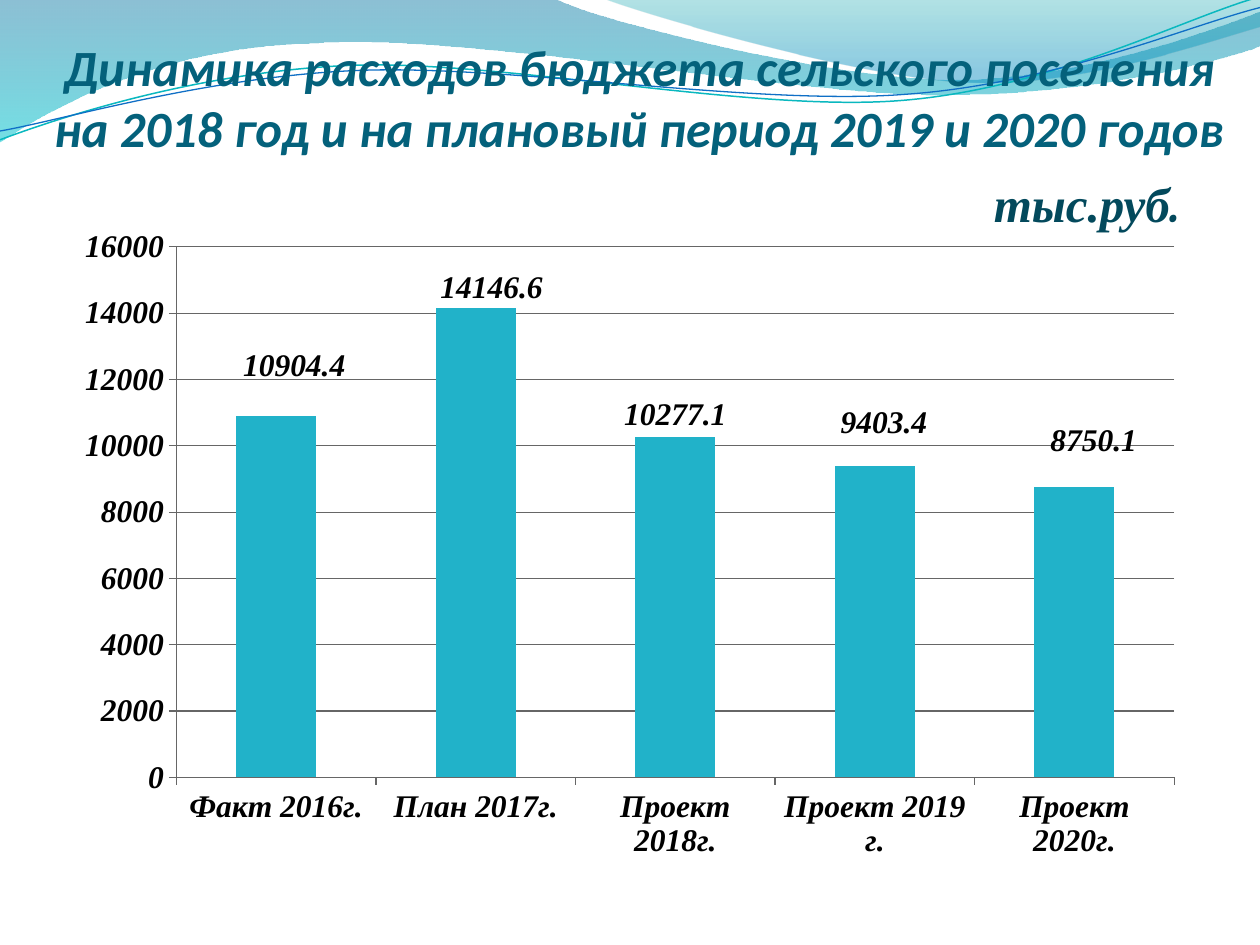
from lxml.etree import SubElement
from pptx import Presentation
from pptx.chart.data import CategoryChartData
from pptx.dml.color import RGBColor
from pptx.enum.chart import XL_CHART_TYPE, XL_LABEL_POSITION, XL_TICK_MARK
from pptx.enum.text import MSO_ANCHOR, MSO_AUTO_SIZE, PP_ALIGN
from pptx.oxml import parse_xml
from pptx.oxml.ns import nsdecls, qn
from pptx.util import Inches, Pt

TITLE = ("Динамика расходов бюджета сельского поселения "
         "на 2018 год и на плановый период 2019 и 2020 годов ")
UNIT = [("тыс.руб", "Times New Roman"), (".", "Cambria")]
# category, value, shift of its label as shares of the chart
BARS = [
    ("Факт 2016г.", 10904.4, (0.016, -0.043)),
    ("План 2017г.", 14146.6, (0.014, 0.003)),
    ("Проект 2018г.", 10277.1, None),
    ("Проект 2019 г.", 9403.4, (0.008, -0.032)),
    ("Проект 2020г.", 8750.1, (0.017, -0.037)),
]
PLOT = (0.1, 0.046, 0.88, 0.81)

BLACK = RGBColor(0, 0, 0)
GREY = RGBColor(0x66, 0x66, 0x66)
TEAL = RGBColor(0x04, 0x61, 0x7B)
DARK = RGBColor(0x03, 0x49, 0x5C)
BAR = RGBColor(0x21, 0xB2, 0xC9)
AQUA = RGBColor(0x0A, 0xB8, 0xBF)
BLUE = RGBColor(0x0F, 0x6F, 0xC6)

# A path is a list of parts: one point adds a line, three add a Bezier curve.
# Bands: path, then gradient stops as place, colour, opacity in percent
BANDS = [
    ([[(0, 0)], [(4.4, -0.01)],
      [(4.76, 0.17), (6.64, 0.63), (7.58, 0.63)],
      [(8.53, 0.63), (9.58, 0.26), (10, 0.09)], [(10.01, 0.36)],
      [(9.83, 0.44), (8.7, 0.76), (7.46, 0.75)],
      [(6.22, 0.75), (3.82, 0.28), (2.57, 0.34)],
      [(1.29, 0.36), (0.46, 0.83), (-0.01, 1.13)], [(0, 0)]],
     [(0, RGBColor(0x00, 0x74, 0xA1), 45), (1, RGBColor(0x00, 0xC6, 0xCF), 55)]),
    ([[(4.79, -0.01)],
      [(5.09, 0.11), (6.82, 0.62), (7.69, 0.65)],
      [(8.56, 0.69), (9.61, 0.32), (10, 0.21)], [(10, 0)], [(4.79, -0.01)]],
     [(0, RGBColor(0x00, 0xA1, 0xA9), 30), (0.8, RGBColor(0x00, 0x8B, 0xBF), 45)]),
]
WAVES = [
    ([[(0, 1.11)],
      [(0.48, 0.93), (1.58, 0.57), (2.77, 0.52)],
      [(3.95, 0.47), (5.93, 0.89), (7.13, 0.8)],
      [(8.33, 0.71), (9.38, 0.15), (9.98, -0.02)]], AQUA, 0.85),
    ([[(0, 1.04)],
      [(0.47, 0.96), (1.64, 0.61), (2.83, 0.56)],
      [(4.03, 0.51), (5.97, 0.84), (7.17, 0.75)],
      [(8.36, 0.67), (9.41, 0.21), (10, 0.06)]], BLUE, 0.75),
]


def draw(slide, path, close):
    """Draw straight parts, then merge each three of a curve into one Bezier."""
    first, *rest = [(Inches(x), Inches(y)) for part in path for x, y in part]
    pen = slide.shapes.build_freeform(*first, scale=1.0)
    pen.add_line_segments(rest, close=close)
    shape = pen.convert_to_shape()
    shape.shadow.inherit = False
    lines = iter(shape._element.findall(".//" + qn("a:lnTo")))
    for part in path[1:]:
        group = [next(lines) for _ in part]
        if len(group) == 3:
            curve = parse_xml(f'<a:cubicBezTo {nsdecls("a")}/>')
            group[0].addprevious(curve)
            for line in group:
                curve.append(line[0])
                line.getparent().remove(line)
    return shape


def add_band(slide, path, stops):
    shape = draw(slide, path, True)
    shape.line.fill.background()
    shape.fill.gradient()
    shape.fill.gradient_angle = 270
    for stop, (place, color, _) in zip(shape.fill.gradient_stops, stops):
        stop.position = place
        stop.color.rgb = color
    tints = shape._element.spPr.findall(".//" + qn("a:srgbClr"))
    for tint, (_, _, alpha) in zip(tints, stops):
        SubElement(tint, qn("a:alpha"), val=str(alpha * 1000))


def add_wave(slide, path, color, width):
    shape = draw(slide, path, False)
    shape.fill.background()
    shape.line.color.rgb = color
    shape.line.width = Pt(width)


def style(font, name, size, color):
    font.name, font.size = name, Pt(size)
    font.bold = font.italic = True
    font.color.rgb = color


def layout(keys, vals, inner=False):
    head = '<c:layoutTarget val="inner"/><c:xMode val="edge"/><c:yMode val="edge"/>'
    body = "".join(f'<c:{k} val="{v}"/>' for k, v in zip(keys, vals))
    return parse_xml(f'<c:layout {nsdecls("c")}><c:manualLayout>'
                     f'{head if inner else ""}{body}</c:manualLayout></c:layout>')


def set_labels(series):
    tags = series.data_labels
    tags.show_value = True
    tags.number_format, tags.number_format_is_linked = "0.0", False
    tags.position = XL_LABEL_POSITION.OUTSIDE_END
    style(tags.font, "Times New Roman", 18, BLACK)
    for i, (_, _, shift) in enumerate(BARS):
        if shift:
            tag = series.points[i].data_label
            style(tag.font, "Times New Roman", 18, BLACK)
            tag.position = XL_LABEL_POSITION.OUTSIDE_END
            node = series._element.xpath(f'.//c:dLbl[c:idx/@val="{i}"]')[0]
            node.find(qn("c:idx")).addnext(layout("xy", shift))
    for lead in series._element.xpath(".//c:showLeaderLines"):
        lead.set("val", "0")


def add_bars(slide):
    data = CategoryChartData(number_format="0.0")
    data.categories = [b[0] for b in BARS]
    data.add_series("Series 1", [b[1] for b in BARS])
    chart = slide.shapes.add_chart(
        XL_CHART_TYPE.COLUMN_CLUSTERED, Inches(0.5), Inches(1.72),
        Inches(9), Inches(5.2), data).chart
    chart.has_legend = chart.has_title = False
    style(chart.font, "Cambria", 18, BLACK)
    cats, vals = chart.category_axis, chart.value_axis
    for axis in (cats, vals):
        style(axis.tick_labels.font, "Times New Roman", 18, BLACK)
        axis.format.line.color.rgb = GREY
        axis.major_tick_mark = XL_TICK_MARK.OUTSIDE
    vals.minimum_scale, vals.maximum_scale, vals.major_unit = 0, 16000, 2000
    vals.tick_labels.number_format = "0"
    vals.tick_labels.number_format_is_linked = False
    vals.major_gridlines.format.line.color.rgb = GREY
    plot = chart.plots[0]
    plot.gap_width, plot.vary_by_categories = 150, False
    series = plot.series[0]
    series.format.fill.solid()
    series.format.fill.fore_color.rgb = BAR
    set_labels(series)
    area = chart._chartSpace.find(".//" + qn("c:plotArea"))
    old = area.find(qn("c:layout"))
    if old is not None:
        area.remove(old)
    area.insert(0, layout("xywh", PLOT, True))


def set_title(slide):
    title = slide.shapes.title
    slide.shapes._spTree.append(title._element)
    title.left, title.top = Inches(0.39), Inches(0)
    title.width, title.height = Inches(9.38), Inches(1.25)
    frame = title.text_frame
    frame.auto_size, frame.word_wrap = MSO_AUTO_SIZE.NONE, True
    frame.vertical_anchor = MSO_ANCHOR.BOTTOM
    frame.margin_left = frame.margin_right = frame.margin_bottom = 0
    line = frame.paragraphs[0]
    line.alignment = PP_ALIGN.CENTER
    run = line.add_run()
    run.text = TITLE
    style(run.font, "Calibri", 29, TEAL)


def add_unit(slide):
    box = slide.shapes.add_textbox(Inches(7.27), Inches(1.33), Inches(2.19), Inches(0.57))
    frame = box.text_frame
    frame.word_wrap, frame.auto_size = True, MSO_AUTO_SIZE.SHAPE_TO_FIT_TEXT
    line = frame.paragraphs[0]
    line.alignment = PP_ALIGN.RIGHT
    for text, name in UNIT:
        run = line.add_run()
        run.text = text
        style(run.font, name, 28, DARK)


def main():
    deck = Presentation()
    deck.slide_width, deck.slide_height = Inches(10), Inches(7.5)
    slide = deck.slides.add_slide(deck.slide_layouts[5])
    for band in BANDS:
        add_band(slide, *band)
    for wave in WAVES:
        add_wave(slide, *wave)
    set_title(slide)
    add_bars(slide)
    add_unit(slide)
    deck.save("out.pptx")


if __name__ == "__main__":
    main()
